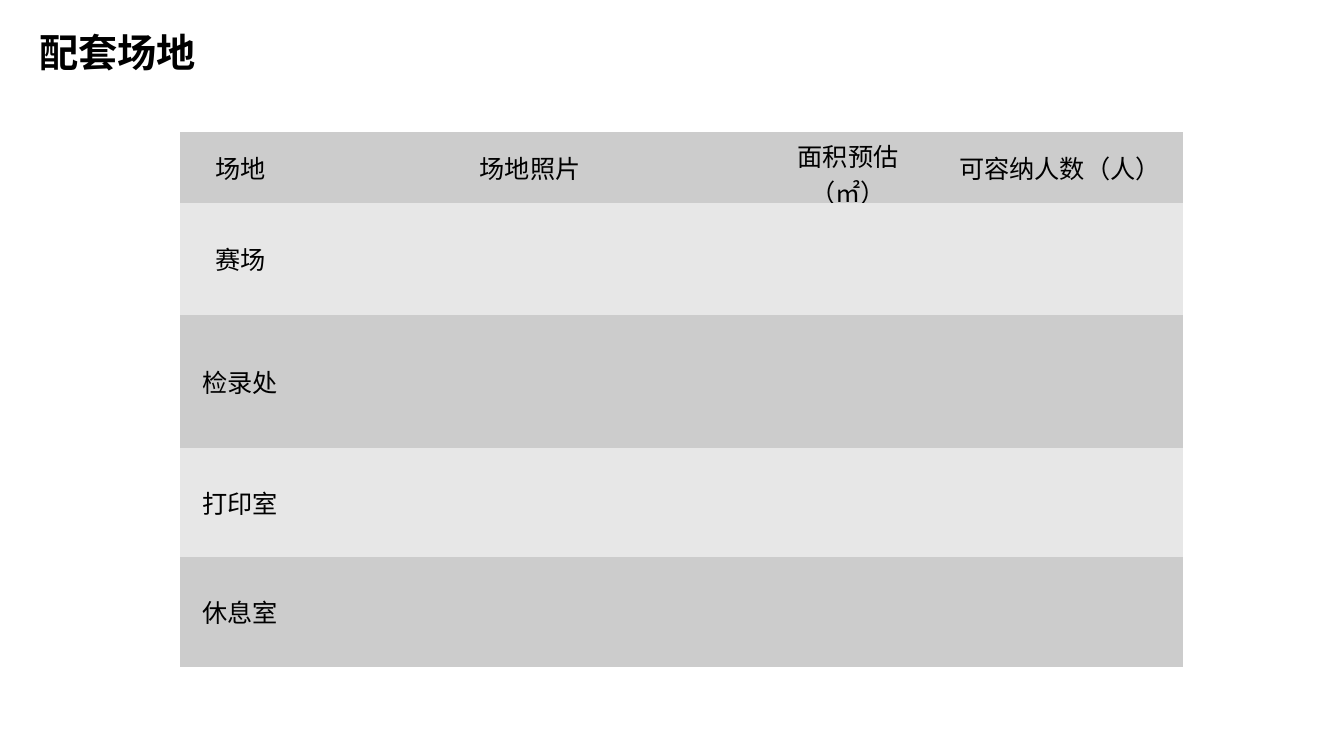
from pptx import Presentation
from pptx.dml.color import RGBColor
from pptx.enum.text import MSO_ANCHOR as Anchor, PP_ALIGN as Align
from pptx.oxml.ns import qn
from pptx.util import Pt

HEADINGS = ["场地", "场地照片", "面积预估（㎡）", "可容纳人数（人）"]
VENUES = ["赛场", "检录处", "打印室", "休息室"]
COLUMN_SHARES = [1.2, 4.55, 1.76, 2.44]
ROW_HEIGHTS = [43.2, 80.4, 95, 78, 78]
BAND_FILLS = ["CCCCCC", "E7E7E7"]


def color(value):
    return RGBColor.from_string(value)


def write(frame, text, size=18, font="Arial", east_asian=None, bold=False,
          align=Align.LEFT, fill="000000"):
    paragraph = frame.paragraphs[0]
    paragraph.alignment = align
    run = paragraph.add_run()
    run.text = text
    run.font.size = Pt(size)
    run.font.name = font
    run.font.bold = bold
    run.font.color.rgb = color(fill)
    if east_asian:
        properties = run.font._element
        element = properties.makeelement(qn("a:ea"), {"typeface": east_asian})
        properties.find(qn("a:latin")).addnext(element)


def add_title(slide, text, left, top, width, height):
    shape = slide.shapes.add_textbox(Pt(left), Pt(top), Pt(width), Pt(height))
    frame = shape.text_frame
    frame.word_wrap = True
    frame.margin_left = frame.margin_right = Pt(3.6)
    frame.margin_top = frame.margin_bottom = Pt(3.6)
    write(frame, text, size=28, font="Noto Sans CJK SC",
          east_asian="Noto Sans CJK SC", bold=True)


def add_venue_table(slide, left, top, width):
    rows = [HEADINGS] + [[venue, "", "", ""] for venue in VENUES]
    shape = slide.shapes.add_table(len(rows), len(HEADINGS), Pt(left), Pt(top),
                                   Pt(width), Pt(sum(ROW_HEIGHTS)))
    table = shape.table
    table.first_row = table.horz_banding = False
    for column, share in zip(table.columns, COLUMN_SHARES):
        column.width = Pt(width * share / sum(COLUMN_SHARES))
    for row_index, texts in enumerate(rows):
        table.rows[row_index].height = Pt(ROW_HEIGHTS[row_index])
        for column_index, text in enumerate(texts):
            cell = table.cell(row_index, column_index)
            cell.fill.solid()
            cell.fill.fore_color.rgb = color(BAND_FILLS[row_index % 2])
            cell.vertical_anchor = Anchor.MIDDLE
            if text:
                write(cell.text_frame, text, align=Align.CENTER)
    properties = table._tbl.tblPr
    style = properties.find(qn("a:tableStyleId"))
    style.text = "{2D5ABB26-0587-4C30-8999-92F81FD0307C}"


def main():
    presentation = Presentation()
    presentation.slide_width = Pt(960)
    presentation.slide_height = Pt(540)
    slide = presentation.slides.add_slide(presentation.slide_layouts[6])
    add_title(slide, "配套场地", 24.5, 16.5, 680, 53)
    add_venue_table(slide, 128.5, 94.3, 716.4)
    presentation.save("out.pptx")


if __name__ == "__main__":
    main()
